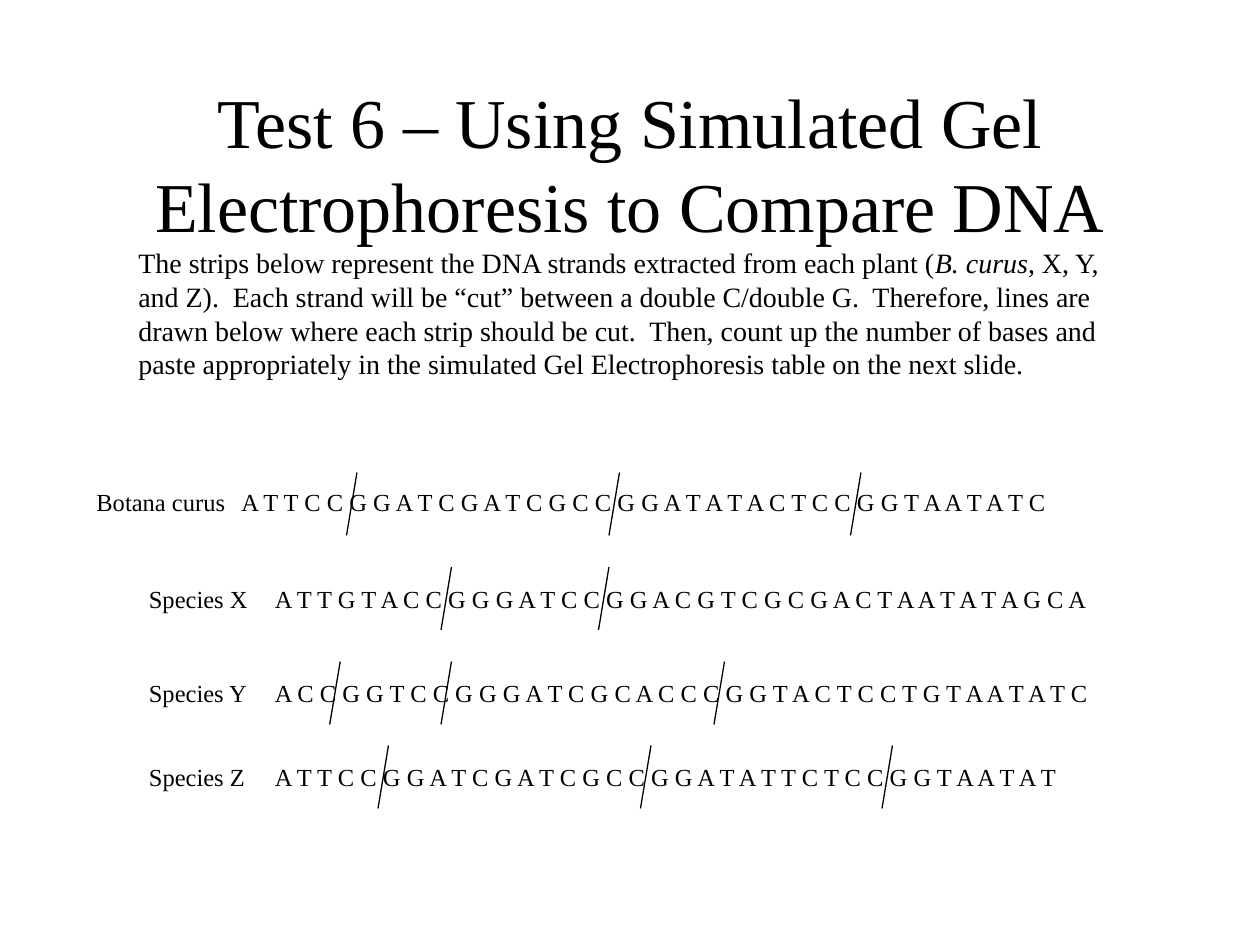
from pptx import Presentation
from pptx.dml.color import RGBColor
from pptx.enum.shapes import MSO_CONNECTOR
from pptx.enum.text import MSO_ANCHOR, MSO_AUTO_SIZE, PP_ALIGN
from pptx.oxml.ns import qn
from pptx.util import Pt
from lxml import etree

STRAIGHT = MSO_CONNECTOR.STRAIGHT
MIDDLE = MSO_ANCHOR.MIDDLE
NO_FIT = MSO_AUTO_SIZE.NONE
CENTER, LEFT = PP_ALIGN.CENTER, PP_ALIGN.LEFT

COLORS = {"ink": "000000", "paper": "FFFFFF"}
FONT = "Times New Roman"
TITLE_ONLY = 5
CUT_HEIGHT, CUT_SLANT = 36, 6
TEXT_HEIGHT = 24.5

TITLE = "Test 6 – Using Simulated Gel Electrophoresis to Compare DNA"
INTRO = [
    ("The strips below represent the DNA strands extracted from each plant (", False),
    ("B. curus", True),
    (", X, Y, and Z).  Each strand will be “cut” between a double C/double G.  "
     "Therefore, lines are drawn below where each strip should be cut.  Then, count up "
     "the number of bases and paste appropriately in the simulated Gel Electrophoresis "
     "table on the next slide.", False),
]
STRANDS = [
    ("Botana curus", "ATTCCGGATCGATCGCCGGATATACTCCGGTAATATC",
     (48, 275, 589), 82.8, 270, (204, 354, 492)),
    ("Species X", "ATTGTACCGGGATCCGGACGTCGCGACTAATATAGCA",
     (78, 330, 612), 72, 324, (258, 348)),
    ("Species Y", "ACCGGTCCGGGATCGCACCCGGTACTCCTGTAATATC",
     (78, 384, 576), 72, 378, (194.4, 258, 414)),
    ("Species Z", "ATTCCGGATCGATCGCCGGATATTCTCCGGTAATAT",
     (78, 432, 600), 72, 426, (222, 372, 510)),
]


def format_runs(paragraph, size, align=LEFT):
    """Give every run of a paragraph the slide's font and colour."""
    paragraph.alignment = align
    for run in paragraph.runs:
        run.font.name = FONT
        run.font.size = Pt(size)
        run.font.color.rgb = RGBColor.from_string(COLORS["ink"])


def add_title(slide, left, top, width, height):
    """Place the heading in the title placeholder."""
    heading = slide.shapes.title
    heading.left, heading.top = Pt(left), Pt(top)
    heading.width, heading.height = Pt(width), Pt(height)
    frame = heading.text_frame
    frame.text = TITLE
    frame.word_wrap = True
    frame.auto_size = NO_FIT
    frame.vertical_anchor = MIDDLE
    format_runs(frame.paragraphs[0], 40, CENTER)


def add_intro(slide, left, top, width, height):
    """Place the explanation with the species name in italics."""
    intro = slide.shapes.add_textbox(Pt(left), Pt(top), Pt(width), Pt(height))
    intro.text_frame.word_wrap = True
    paragraph = intro.text_frame.paragraphs[0]
    for wording, italic in INTRO:
        run = paragraph.add_run()
        run.text = wording
        run.font.italic = italic
    format_runs(paragraph, 16)


def add_strand(slide, left, top, width, label, bases, tab):
    """Place a species label and its bases, which start at the tab stop."""
    strand = slide.shapes.add_textbox(Pt(left), Pt(top), Pt(width), Pt(TEXT_HEIGHT))
    frame = strand.text_frame
    frame.word_wrap = True
    frame.text = f"{label}\t{' '.join(bases)}"
    paragraph = frame.paragraphs[0]
    format_runs(paragraph, 14)
    stops = etree.SubElement(paragraph._p.get_or_add_pPr(), qn("a:tabLst"))
    etree.SubElement(stops, qn("a:tab"), pos=str(int(Pt(tab))), algn="l")


def add_cut(slide, x, top):
    """Draw one slanted cut line from its upper end."""
    cut = slide.shapes.add_connector(
        STRAIGHT, Pt(x), Pt(top), Pt(x - CUT_SLANT), Pt(top + CUT_HEIGHT))
    cut.line.color.rgb = RGBColor.from_string(COLORS["ink"])
    cut.line.width = Pt(0.75)
    etree.SubElement(cut._element.spPr, qn("a:effectLst"))


def main():
    """Build the slide and save it."""
    deck = Presentation()
    deck.slide_width, deck.slide_height = Pt(720), Pt(540)
    slide = deck.slides.add_slide(deck.slide_layouts[TITLE_ONLY])
    slide.background.fill.solid()
    slide.background.fill.fore_color.rgb = RGBColor.from_string(COLORS["paper"])
    add_title(slide, 54, 48, 612, 90)
    add_intro(slide, 72, 137, 564, 104)
    for label, bases, box, tab, cut_top, cuts in STRANDS:
        add_strand(slide, *box, label, bases, tab)
        for x in cuts:
            add_cut(slide, x, cut_top)
    deck.save("out.pptx")


if __name__ == "__main__":
    main()
